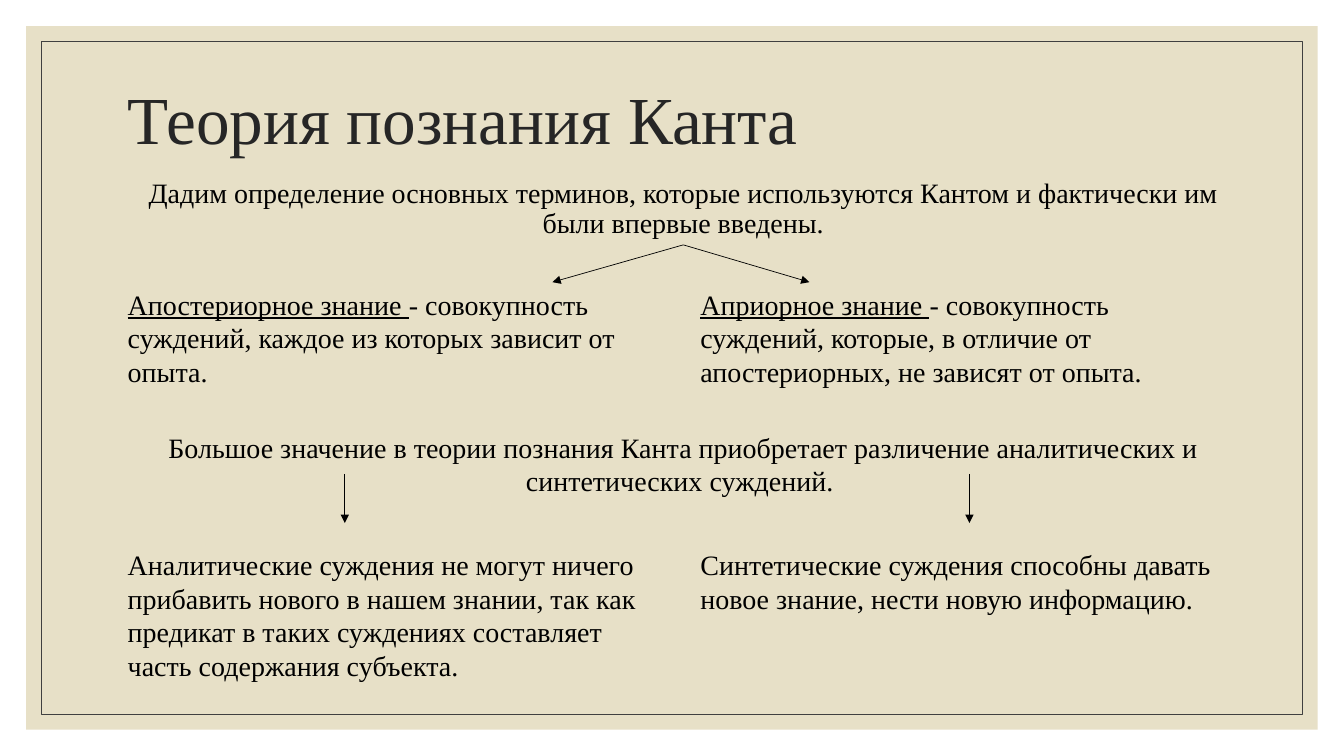
"""Builds a slide on Kant's theory of knowledge with paired definitions."""
from dataclasses import dataclass

from lxml import etree
from pptx import Presentation
from pptx.dml.color import RGBColor
from pptx.enum.shapes import MSO_CONNECTOR, MSO_SHAPE
from pptx.enum.text import MSO_ANCHOR, MSO_AUTO_SIZE, PP_ALIGN
from pptx.oxml.ns import qn
from pptx.util import Cm, Pt

LEFT, CENTER = PP_ALIGN.LEFT, PP_ALIGN.CENTER
TOP, MIDDLE = MSO_ANCHOR.TOP, MSO_ANCHOR.MIDDLE
NO_FIT = MSO_AUTO_SIZE.NONE
STRAIGHT, RECTANGLE = MSO_CONNECTOR.STRAIGHT, MSO_SHAPE.RECTANGLE
BOTTOM_SIDE = 2


@dataclass(frozen=True)
class Theme:
    """Colours, font and sizes of the slide."""
    font: str = "Times New Roman"
    panel: RGBColor = RGBColor(0xE7, 0xE0, 0xC7)
    frame: RGBColor = RGBColor(0x40, 0x40, 0x40)
    title: RGBColor = RGBColor(0x26, 0x26, 0x26)
    text: RGBColor = RGBColor(0, 0, 0)
    title_size: Pt = Pt(48)
    text_size: Pt = Pt(20)
    line_width: Pt = Pt(0.5)


THEME = Theme()
SLIDE_WIDTH, SLIDE_HEIGHT = 33.87, 19.05
PANEL_INSET, FRAME_INSET = 0.66, 1.04
LEFT_COLUMN, RIGHT_COLUMN, COLUMN_WIDTH = 2.97, 17.4, 13.5
FULL_WIDTH = 28.5
KNOWLEDGE_TOP, DISTINCTION_TOP, JUDGEMENT_TOP = 7.11, 10.72, 13.67

TITLE = "Теория познания Канта"
INTRO = ("Дадим определение основных терминов, которые используются Кантом "
         "и фактически им были впервые введены.")
DISTINCTION = ("Большое значение в теории познания Канта приобретает различение "
               "аналитических и синтетических суждений. ")
KNOWLEDGE = [
    (LEFT_COLUMN, "Апостериорное знание ",
     "- совокупность суждений, каждое из которых зависит от опыта."),
    (RIGHT_COLUMN, "Априорное знание ",
     "- совокупность суждений, которые, в отличие от апостериорных, "
     "не зависят от опыта."),
]
JUDGEMENTS = [
    (LEFT_COLUMN, 3.68,
     "Аналитические суждения не могут ничего прибавить нового в нашем знании, "
     "так как предикат в таких суждениях составляет часть содержания субъекта."),
    (RIGHT_COLUMN, 1.96,
     "Синтетические суждения способны давать новое знание, "
     "нести новую информацию."),
]
BRANCH_START, BRANCH_ENDS = (17.22, 6.17), [13.92, 20.4]
DROP_POSITIONS, DROP_TOP, DROP_BOTTOM = [8.69, 24.43], 11.94, 13.18


def place(shape, left, top, width, height):
    shape.left, shape.top = Cm(left), Cm(top)
    shape.width, shape.height = Cm(width), Cm(height)


def write(shape, parts, align=LEFT, anchor=TOP, size=THEME.text_size,
          color=THEME.text, spacing=1.0):
    text_frame = shape.text_frame
    text_frame.word_wrap = True
    text_frame.auto_size = NO_FIT
    text_frame.vertical_anchor = anchor
    paragraph = text_frame.paragraphs[0]
    paragraph.alignment = align
    paragraph.line_spacing = spacing
    for part in parts:
        run = paragraph.add_run()
        run.text = part
        run.font.name, run.font.size = THEME.font, size
        run.font.color.rgb = color
    return paragraph


def add_text(slide, left, top, width, height, parts, align=LEFT):
    box = slide.shapes.add_textbox(Cm(left), Cm(top), Cm(width), Cm(height))
    return write(box, parts, align)


def add_backdrop(slide, inset):
    shape = slide.shapes.add_shape(
        RECTANGLE, Cm(inset), Cm(inset),
        Cm(SLIDE_WIDTH - 2 * inset), Cm(SLIDE_HEIGHT - 2 * inset))
    shape.shadow.inherit = False
    slide.shapes.title.element.addprevious(shape.element)
    return shape


def add_arrow(slide, start, end):
    arrow = slide.shapes.add_connector(STRAIGHT, *map(Cm, start + end))
    arrow.line.color.rgb = THEME.text
    arrow.line.width = THEME.line_width
    properties = arrow.element.spPr
    etree.SubElement(properties.find(qn("a:ln")), qn("a:tailEnd"), type="triangle")
    etree.SubElement(properties, qn("a:effectLst"))
    return arrow


def main():
    presentation = Presentation()
    presentation.slide_width = Cm(SLIDE_WIDTH)
    presentation.slide_height = Cm(SLIDE_HEIGHT)
    slide = presentation.slides.add_slide(presentation.slide_layouts[1])

    panel = add_backdrop(slide, PANEL_INSET)
    panel.fill.solid()
    panel.fill.fore_color.rgb = THEME.panel
    panel.line.fill.background()
    frame = add_backdrop(slide, FRAME_INSET)
    frame.fill.background()
    frame.line.color.rgb = THEME.frame
    frame.line.width = THEME.line_width

    title, intro = slide.shapes.title, slide.placeholders[1]
    place(title, LEFT_COLUMN, 1.78, 27.94, 2.62)
    write(title, [TITLE], LEFT, MIDDLE, THEME.title_size, THEME.title, 0.9)
    place(intro, LEFT_COLUMN, 4.39, FULL_WIDTH, 1.78)
    paragraph = write(intro, [INTRO], CENTER, spacing=0.9)
    paragraph.space_before = Pt(9)
    properties = paragraph._p.get_or_add_pPr()
    properties.set("marL", "0")
    properties.set("indent", "0")
    etree.SubElement(properties, qn("a:buNone"))

    for left, term, definition in KNOWLEDGE:
        paragraph = add_text(slide, left, KNOWLEDGE_TOP, COLUMN_WIDTH, 2.82,
                             [term, definition])
        paragraph.runs[0].font.underline = True
    add_text(slide, LEFT_COLUMN, DISTINCTION_TOP, FULL_WIDTH, 1.96,
             [DISTINCTION], CENTER)
    for left, height, judgement in JUDGEMENTS:
        add_text(slide, left, JUDGEMENT_TOP, COLUMN_WIDTH, height, [judgement])

    for end in BRANCH_ENDS:
        branch = add_arrow(slide, BRANCH_START, (end, KNOWLEDGE_TOP))
        branch.begin_connect(intro, BOTTOM_SIDE)
    for position in DROP_POSITIONS:
        add_arrow(slide, (position, DROP_TOP), (position, DROP_BOTTOM))

    presentation.save("out.pptx")


if __name__ == "__main__":
    main()
